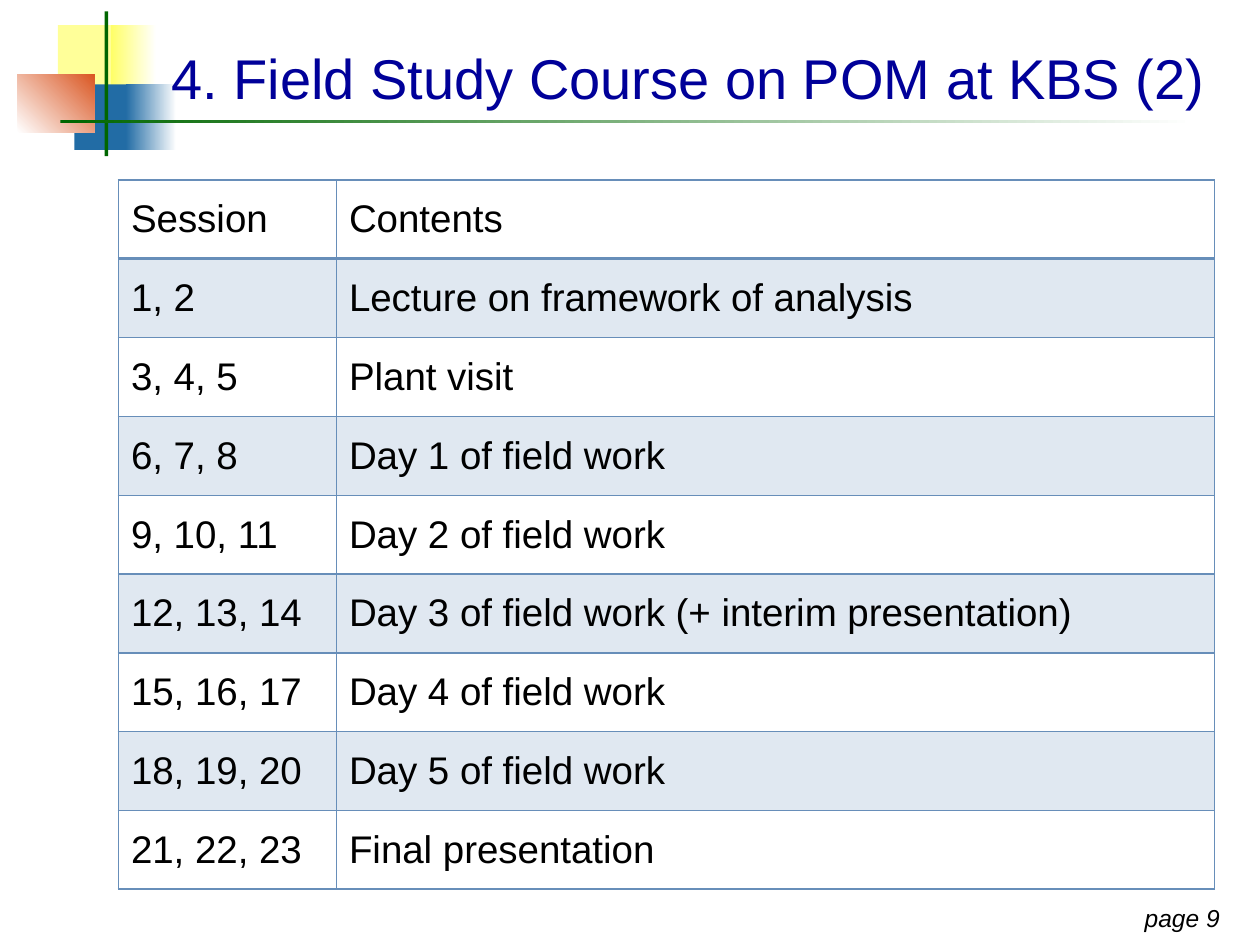
from lxml.etree import SubElement
from pptx import Presentation
from pptx.dml.color import RGBColor
from pptx.enum.shapes import MSO_SHAPE
from pptx.enum.text import MSO_ANCHOR, MSO_AUTO_SIZE, PP_ALIGN
from pptx.oxml import parse_xml
from pptx.oxml.ns import nsdecls, qn
from pptx.util import Inches, Pt

COLORS = {
    "pale_yellow": "FFFF99", "yellow": "FFFF66", "blue": "226CA5",
    "orange": "DA5723", "green": "006600", "white": "FFFFFF",
    "title": "000099", "text": "000000", "grid": "678EB9",
}

# left, top, width, height, colours (two make a gradient), gradient angle
ORNAMENT = [
    (0.46, 0.2, 0.48, 0.52, ["pale_yellow"], 0),
    (0.88, 0.2, 0.36, 0.52, ["yellow", "white"], 0),
    (0.59, 0.67, 0.46, 0.52, ["blue"], 0),
    (1, 0.67, 0.4, 0.52, ["blue", "white"], 0),
    (0.14, 0.59, 0.61, 0.46, ["white", "orange"], 45),
    (0.83, 0.09, 0.03, 1.15, ["green"], 0),
    (0.48, 0.95, 9, 0.03, ["green", "white"], 0),
]

SCHEDULE = [
    ("Session", "Contents"),
    ("1, 2", "Lecture on framework of analysis"),
    ("3, 4, 5", "Plant visit"),
    ("6, 7, 8", "Day 1 of field work"),
    ("9, 10, 11", "Day 2 of field work"),
    ("12, 13, 14", "Day 3 of field work (+ interim presentation)"),
    ("15, 16, 17", "Day 4 of field work"),
    ("18, 19, 20", "Day 5 of field work"),
    ("21, 22, 23", "Final presentation"),
]
COLUMN_WIDTHS = (1.73, 6.97)
TABLE_HEIGHT = 5.63


def color(name):
    return RGBColor.from_string(COLORS[name])


def write(frame, text, size, tint="text", align=PP_ALIGN.LEFT, italic=False):
    para = frame.paragraphs[0]
    para.alignment = align
    span = para.add_run()
    span.text = text
    span.font.color.rgb = color(tint)
    formats = {"name": "Arial", "size": Pt(size), "bold": False, "italic": italic}
    for attribute, value in formats.items():
        setattr(span.font, attribute, value)


def set_frame(frame):
    formats = {"word_wrap": True, "auto_size": MSO_AUTO_SIZE.NONE,
               "vertical_anchor": MSO_ANCHOR.BOTTOM}
    for attribute, value in formats.items():
        setattr(frame, attribute, value)


def add_block(page, left, top, width, height, tints, angle):
    block = page.shapes.add_shape(
        MSO_SHAPE.RECTANGLE, *map(Inches, (left, top, width, height)))
    block.shadow.inherit = False
    block.line.fill.background()
    if len(tints) == 1:
        block.fill.solid()
        block.fill.fore_color.rgb = color(tints[0])
        return
    block.fill.gradient()
    block.fill.gradient_angle = angle
    for stop, tint, position in zip(block.fill.gradient_stops, tints, (0, 1)):
        stop.color.rgb = color(tint)
        stop.position = position


def add_title(page, text):
    title = page.shapes.title
    place = {"left": 1.26, "top": 0.23, "width": 8.52, "height": 0.7}
    for attribute, value in place.items():
        setattr(title, attribute, Inches(value))
    set_frame(title.text_frame)
    write(title.text_frame, text, 32, "title")


def add_page_label(page, text):
    box = page.shapes.add_textbox(*map(Inches, (7.7, 7.15, 2.08, 0.3)))
    set_frame(box.text_frame)
    write(box.text_frame, text, 14, align=PP_ALIGN.RIGHT, italic=True)


def fill_cell(cell, shaded):
    if not shaded:
        cell.fill.background()
        return
    cell.fill.solid()
    cell.fill.fore_color.rgb = color("grid")
    shade = cell._tc.tcPr.find(".//" + qn("a:srgbClr"))
    SubElement(shade, qn("a:alpha"), val="20000")


def set_borders(cell, widths):
    # Border lines come before the fill in the cell properties
    for index, (side, width) in enumerate(widths.items()):
        cell._tc.get_or_add_tcPr().insert(index, parse_xml(
            f'<a:ln{side} {nsdecls("a")} w="{Pt(width)}"><a:solidFill>'
            f'<a:srgbClr val="{COLORS["grid"]}"/></a:solidFill></a:ln{side}>'))


def add_schedule(page):
    table = page.shapes.add_table(
        len(SCHEDULE), len(COLUMN_WIDTHS), Inches(0.94), Inches(1.43),
        Inches(sum(COLUMN_WIDTHS)), Inches(TABLE_HEIGHT)).table
    table.first_row = table.horz_banding = False
    for column, width in zip(table.columns, COLUMN_WIDTHS):
        column.width = Inches(width)
    for row_index, entries in enumerate(SCHEDULE):
        table.rows[row_index].height = Inches(TABLE_HEIGHT / len(SCHEDULE))
        for column_index, text in enumerate(entries):
            cell = table.cell(row_index, column_index)
            cell.vertical_anchor = MSO_ANCHOR.MIDDLE
            write(cell.text_frame, text, 22)
            fill_cell(cell, shaded=row_index % 2 == 1)
            # The rule under the header row is heavier
            set_borders(cell, {"L": 1, "R": 1, "T": 2 if row_index == 1 else 1,
                               "B": 2 if row_index == 0 else 1})


def main():
    deck = Presentation()
    deck.slide_width, deck.slide_height = Inches(10), Inches(7.5)
    page = deck.slides.add_slide(deck.slide_layouts.get_by_name("Title Only"))

    # Corner ornament, kept behind the title
    for block in ORNAMENT:
        add_block(page, *block)
    tree = page.shapes._spTree
    tree.append(page.shapes.title._element)

    # Title, schedule and page label
    add_title(page, "4. Field Study Course on POM at KBS (2)")
    add_page_label(page, "page 9")
    add_schedule(page)
    deck.save("out.pptx")


if __name__ == "__main__":
    main()
